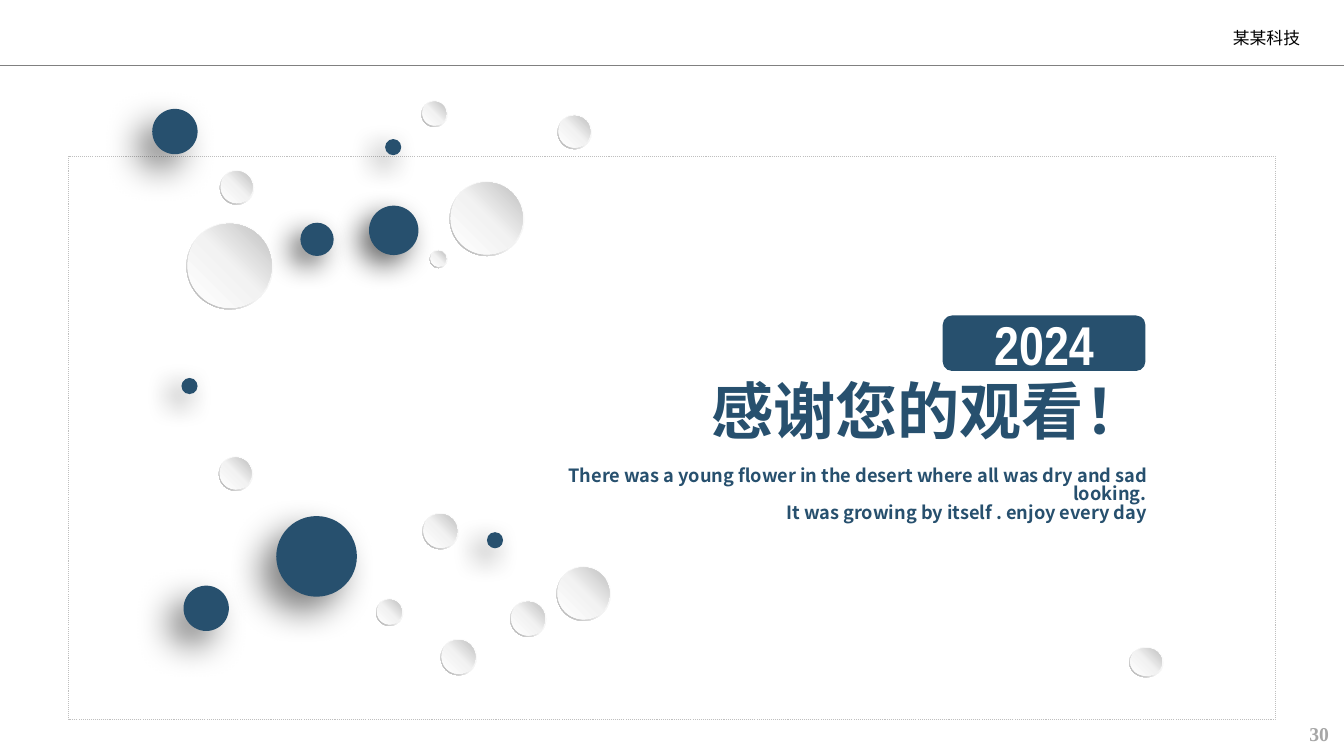
from copy import deepcopy

from lxml import etree
from pptx import Presentation
from pptx.dml.color import RGBColor
from pptx.enum import dml, shapes, text
from pptx.oxml.ns import qn
from pptx.util import Inches, Pt

NAVY = "27506E"
CJK = "Noto Sans CJK SC"


def rgb(value):
    return RGBColor.from_string(value)


def set_text(sp, lines, size, font, color, bold, align, insets, spacing=1.0):
    """Fill a shape with lines of one style; insets are left, top, right, bottom."""
    tf = sp.text_frame
    tf.text = "\n".join(lines)
    tf.word_wrap = True
    tf.auto_size = text.MSO_AUTO_SIZE.NONE
    tf.margin_left, tf.margin_top, tf.margin_right, tf.margin_bottom = map(Inches, insets)
    for p in tf.paragraphs:
        p.alignment = align
        p.line_spacing = spacing
        p.space_before = Pt(0)
        for r in p.runs:
            r.font.size, r.font.bold, r.font.name = Pt(size), bold, font
            r.font.color.rgb = rgb(color)
            etree.SubElement(r.font._element, qn("a:ea")).set("typeface", CJK)


prs = Presentation()
prs.slide_width, prs.slide_height = Inches(13.33), Inches(7.5)
s = prs.slides.add_slide(prs.slide_layouts[0])
title, subtitle = s.placeholders

# Page frame, header rule, header name and page number
frame = s.shapes.add_shape(shapes.MSO_SHAPE.RECTANGLE,
                           Inches(0.68), Inches(1.55), Inches(11.97), Inches(5.59))
frame.shadow.inherit = False
frame.fill.background()
frame.line.color.rgb = rgb("BFBFBF")
frame.line.width = Pt(0.75)
frame.line.dash_style = dml.MSO_LINE.ROUND_DOT

rule = s.shapes.add_connector(shapes.MSO_CONNECTOR.STRAIGHT,
                              0, Inches(0.65), prs.slide_width, Inches(0.65))
rule.line.color.rgb = rgb("808080")
rule.line.width = Pt(1.25)
etree.SubElement(rule._element.spPr, qn("a:effectLst"))

header = s.shapes.add_textbox(Inches(12.13), Inches(0.26), Inches(0.84), Inches(0.23))
set_text(header, ["某某科技"], 12, "Arial", "000000", False,
         text.PP_ALIGN.JUSTIFY, (0.1, 0.01, 0.02, 0.01))
header.text_frame.vertical_anchor = text.MSO_ANCHOR.MIDDLE

page = s.shapes.add_textbox(Inches(12.13), Inches(7.11), Inches(1.15), Inches(0.34))
set_text(page, ["30"], 14, "Times New Roman", "A6A6A6", True,
         text.PP_ALIGN.RIGHT, (0.1, 0.05, 0.1, 0.05))

# Navy dots: left, top, diameter, then shadow opacity %, blur and distance in points
soft, tight = (50, 25, 15), (60, 20, 10)
dots = [(2.74, 5.12, 0.8, soft), (1.82, 5.81, 0.45, soft), (1.51, 1.08, 0.45, soft),
        (2.98, 2.21, 0.33, tight), (3.66, 2.04, 0.49, tight), (4.83, 5.28, 0.16, tight),
        (3.82, 1.38, 0.16, tight), (1.8, 3.75, 0.16, tight)]
for x, y, d, (opacity, blur, distance) in dots:
    dot = s.shapes.add_shape(shapes.MSO_SHAPE.OVAL, Inches(x), Inches(y), Inches(d), Inches(d))
    dot.fill.solid()
    dot.fill.fore_color.rgb = rgb(NAVY)
    dot.line.fill.background()
    dot.shadow.inherit = False
    effects = dot._element.spPr.find(qn("a:effectLst"))
    shadow = etree.SubElement(effects, qn("a:outerShdw"), blurRad=str(Pt(blur)),
                              dist=str(Pt(distance)), dir="8100000",
                              algn="tr", rotWithShape="0")
    shade = etree.SubElement(shadow, qn("a:srgbClr"), val="000000")
    etree.SubElement(shade, qn("a:alpha"), val=str(opacity * 1000))

# Grey buttons: a thin rim with a disc inside, given by left, top, width, height
buttons = [(5.06, 5.96, 0.36, 0.36), (4.46, 1.8, 0.74, 0.74), (3.73, 5.94, 0.27, 0.27),
           (2.17, 4.53, 0.34, 0.34), (5.52, 5.62, 0.54, 0.54), (4.19, 5.09, 0.36, 0.36),
           (4.18, 1, 0.26, 0.26), (2.18, 1.69, 0.34, 0.34), (1.85, 2.21, 0.86, 0.86),
           (5.53, 1.14, 0.34, 0.34), (4.37, 6.34, 0.36, 0.36), (11.2, 6.42, 0.34, 0.3),
           (4.26, 2.48, 0.18, 0.18)]
layers = [(shapes.MSO_SHAPE.DONUT, 0, 225, 0.55, "A6A6A6"),
          (shapes.MSO_SHAPE.OVAL, 0.01, 45, 0.51, "BFBFBF")]
for x, y, w, h in buttons:
    for kind, inset, angle, middle, dark in layers:
        sp = s.shapes.add_shape(kind, Inches(x + inset), Inches(y + inset),
                                Inches(w - 2.5 * inset), Inches(h - 2.5 * inset))
        if kind == shapes.MSO_SHAPE.DONUT:
            sp.adjustments[0] = 0.05
        sp.shadow.inherit = False
        sp.line.fill.background()
        sp.fill.gradient()
        sp.fill.gradient_angle = angle
        stops = sp._element.spPr.find(".//" + qn("a:gsLst"))
        stops.insert(1, deepcopy(stops[0]))
        colors = [(0, "FFFFFF"), (middle, "F2F2F2"), (1, dark)]
        for stop, (position, color) in zip(sp.fill.gradient_stops, colors):
            stop.position = position
            stop.color.rgb = rgb(color)

# Closing words
title.left, title.top, title.width, title.height = map(Inches, (4.26, 3.79, 7.11, 0.75))
set_text(title, ["感谢您的观看！"], 44.4, CJK, NAVY, True,
         text.PP_ALIGN.RIGHT, (0, 0, 0, 0), 0.88)

subtitle.left, subtitle.top, subtitle.width, subtitle.height = map(
    Inches, (5, 4.64, 6.37, 0.66))
set_text(subtitle,
         ["There was a young flower in the desert where all was dry and sad looking.",
          "It was growing by itself . enjoy every day"],
         13, CJK, NAVY, True, text.PP_ALIGN.RIGHT, (0, 0, 0, 0), 0.84)
for sp in (title, subtitle):
    sp.text_frame.vertical_anchor = text.MSO_ANCHOR.TOP

badge = s.shapes.add_shape(shapes.MSO_SHAPE.ROUNDED_RECTANGLE,
                           Inches(9.35), Inches(3.13), Inches(2.01), Inches(0.55))
badge.shadow.inherit = False
badge.fill.solid()
badge.fill.fore_color.rgb = rgb(NAVY)
badge.line.fill.background()
set_text(badge, ["2024"], 39, "Arial Narrow", "FFFFFF", True,
         text.PP_ALIGN.CENTER, (0.08, 0.04, 0.08, 0.04))
badge.text_frame.vertical_anchor = text.MSO_ANCHOR.MIDDLE

prs.save("out.pptx")
